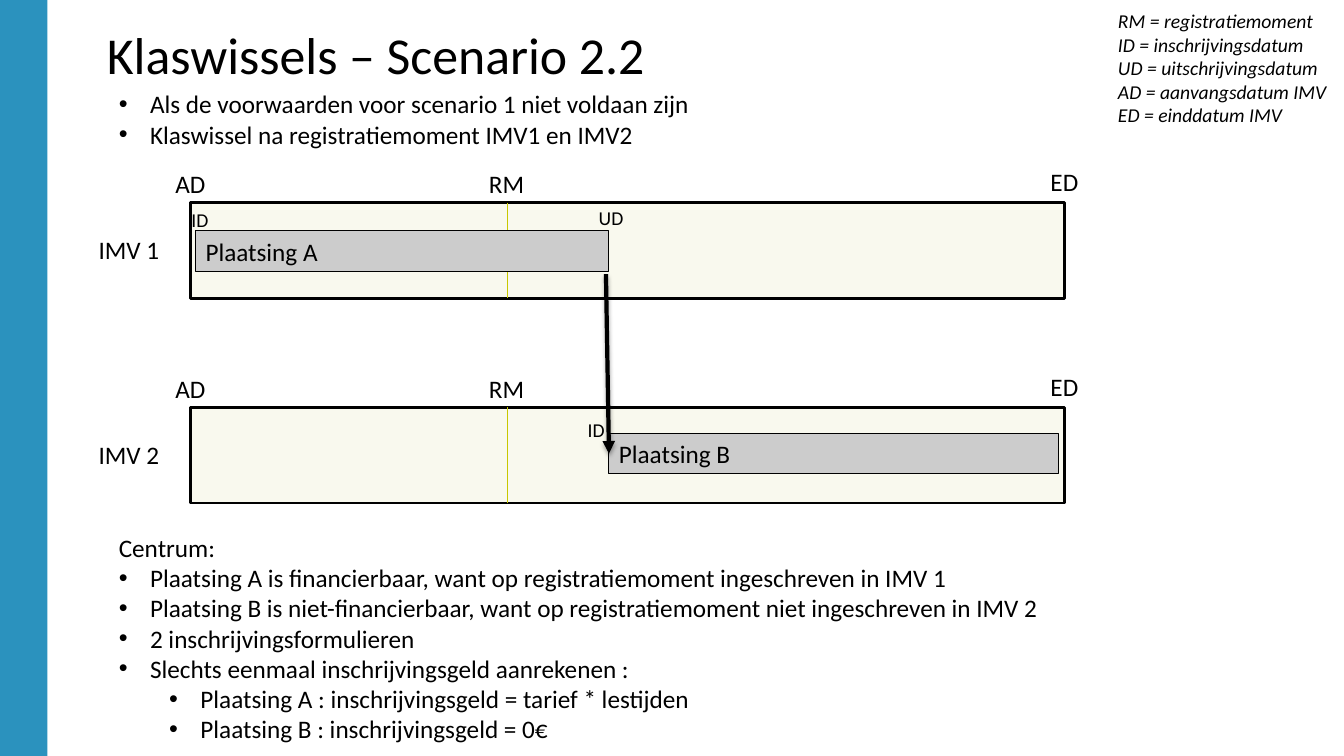
import pptx
import pptx.util
import pptx.oxml
import pptx.dml.color
import pptx.enum.shapes
import pptx.enum.text
from pptx.util import Inches

COLORS = {"band": "2B92BE", "period": "F9F9EE", "bar": "CCCCCC",
          "moment": "C8C800", "ink": "000000"}
NS = 'xmlns:a="http://schemas.openxmlformats.org/drawingml/2006/main"'
SHADOW = (f'<a:effectLst {NS}><a:outerShdw blurRad="39370" dist="22860" dir="5400000" '
          'rotWithShape="0"><a:srgbClr val="000000"><a:alpha val="35000"/></a:srgbClr>'
          '</a:outerShdw></a:effectLst>')


def rgb(name):
    return pptx.dml.color.RGBColor.from_string(COLORS[name])


def write(p, text, size=18, italic=False, bullet=False, level=0):
    r = p.add_run()
    r.text = text
    r.font.size = pptx.util.Pt(size)
    r.font.name = "Calibri"
    r.font.italic = italic
    r.font.color.rgb = rgb("ink")
    p.alignment = pptx.enum.text.PP_ALIGN.LEFT
    if bullet:
        p.level = level
        pPr = p._p.get_or_add_pPr()
        pPr.set("marL", str(Inches(0.31 + 0.5 * level)))
        pPr.set("indent", str(Inches(-0.31)))
        pPr.append(pptx.oxml.parse_xml(f'<a:buFont {NS} typeface="Arial"/>'))
        pPr.append(pptx.oxml.parse_xml(f'<a:buChar {NS} char="•"/>'))


class Deck:
    """Holds the style and the current slide."""

    def __init__(self):
        self.prs = pptx.Presentation()
        self.prs.slide_width = Inches(13.33)
        self.prs.slide_height = Inches(7.5)
        self.s = self.prs.slides.add_slide(self.prs.slide_layouts[5])

    def title(self, text, x, y, w, h):
        sp = self.s.shapes.title
        sp.left, sp.top, sp.width, sp.height = map(Inches, (x, y, w, h))
        tf = sp.text_frame
        tf.margin_top = Inches(0.1)
        tf.vertical_anchor = pptx.enum.text.MSO_ANCHOR.TOP
        tf.auto_size = pptx.enum.text.MSO_AUTO_SIZE.NONE
        write(tf.paragraphs[0], text, size=37)

    def rect(self, x, y, w, h, fill, line=0, text=None):
        sp = self.s.shapes.add_shape(pptx.enum.shapes.MSO_SHAPE.RECTANGLE,
                                     *map(Inches, (x, y, w, h)))
        sp.shadow.inherit = False
        sp.fill.solid()
        sp.fill.fore_color.rgb = rgb(fill)
        if line:
            sp.line.color.rgb = rgb("ink")
            sp.line.width = pptx.util.Pt(line)
        else:
            sp.line.fill.background()
        if text:
            write(sp.text_frame.paragraphs[0], text)
        return sp

    def text(self, x, y, w, h, items, wrap=True, **style):
        tf = self.s.shapes.add_textbox(*map(Inches, (x, y, w, h))).text_frame
        tf.word_wrap = wrap
        tf.auto_size = pptx.enum.text.MSO_AUTO_SIZE.SHAPE_TO_FIT_TEXT
        for i, item in enumerate(items):
            p = tf.add_paragraph() if i else tf.paragraphs[0]
            text, extra = item if isinstance(item, tuple) else (item, {})
            write(p, text, **{**style, **extra})

    def line(self, x1, y1, x2, y2, color, width, target=None):
        c = self.s.shapes.add_connector(pptx.enum.shapes.MSO_CONNECTOR.STRAIGHT,
                                        *map(Inches, (x1, y1, x2, y2)))
        c.line.color.rgb = rgb(color)
        c.line.width = pptx.util.Pt(width)
        effect = f"<a:effectLst {NS}/>"
        if target is not None:
            c.end_connect(target, 1)
            c.line._get_or_add_ln().append(
                pptx.oxml.parse_xml(f'<a:tailEnd {NS} type="triangle"/>'))
            effect = SHADOW
        c._element.spPr.append(pptx.oxml.parse_xml(effect))

    def period(self, name, y):
        self.rect(1.89, y, 8.67, 0.95, "period", line=2)
        self.line(5.03, y, 5.03, y + 0.95, "moment", 0.75)
        for label, x, dy, w in (("RM", 4.75, -0.39, 0.55), (name, 0.88, 0.27, 0.81),
                                ("AD", 1.64, -0.39, 0.5), ("ED", 10.32, -0.41, 0.48)):
            self.text(x, y + dy, w, 0.4, [label], wrap=False)


def main():
    d = Deck()
    d.rect(0, 0, 0.47, 7.5, "band")
    d.title("Klaswissels – Scenario 2.2", 0.96, 0.13, 10.94, 0.49)
    d.period("IMV 1", 2.01)
    d.period("IMV 2", 4.04)
    d.text(1.08, 0.83, 7.09, 0.71,
           ["Als de voorwaarden voor scenario 1 niet voldaan zijn",
            "Klaswissel na registratiemoment IMV1 en IMV2"], bullet=True)
    d.text(10.99, 0.04, 3.87, 1.28,
           ["RM = registratiemoment", "ID = inschrijvingsdatum",
            "UD = uitschrijvingsdatum", "AD = aanvangsdatum IMV",
            "ED = einddatum IMV"], size=14, italic=True)
    d.rect(1.94, 2.29, 4.1, 0.4, "bar", line=0.75, text="Plaatsing A")
    bar_b = d.rect(6.04, 4.3, 4.46, 0.4, "bar", line=0.75, text="Plaatsing B")
    d.line(6.01, 2.72, 6.04, 4.5, "ink", 3, target=bar_b)
    d.text(1.08, 5.23, 9.65, 2.52,
           [("Centrum:", {"bullet": False}),
            "Plaatsing A is financierbaar, want op registratiemoment ingeschreven in IMV 1",
            "Plaatsing B is niet-financierbaar, want op registratiemoment niet ingeschreven in IMV 2",
            "2 inschrijvingsformulieren",
            "Slechts eenmaal inschrijvingsgeld aanrekenen :",
            ("Plaatsing A : inschrijvingsgeld = tarief * lestijden", {"level": 1}),
            ("Plaatsing B : inschrijvingsgeld = 0€", {"level": 1})], bullet=True)
    for label, x, y in (("UD", 5.84, 1.99), ("ID", 1.8, 2.01), ("ID", 5.73, 4.1)):
        d.text(x, y, 0.56, 0.34, [label], size=14)
    d.prs.save("out.pptx")


if __name__ == "__main__":
    main()
